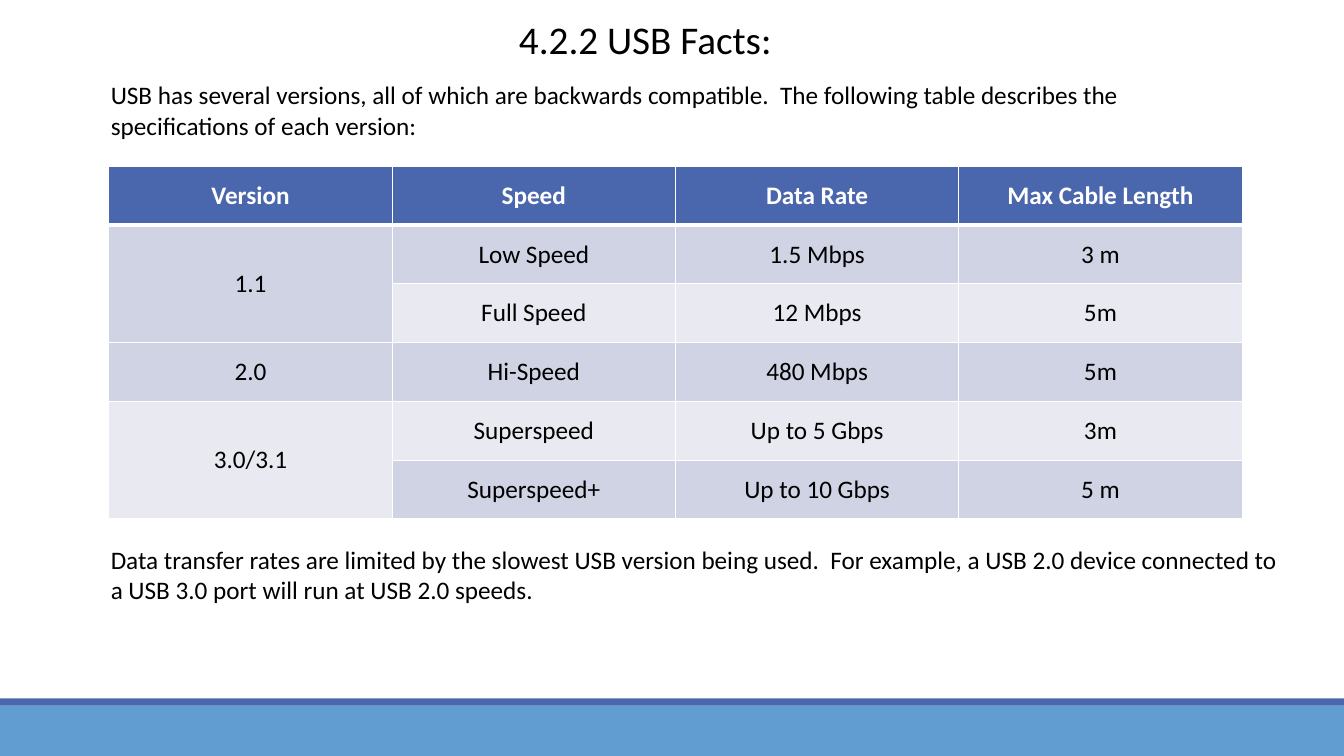
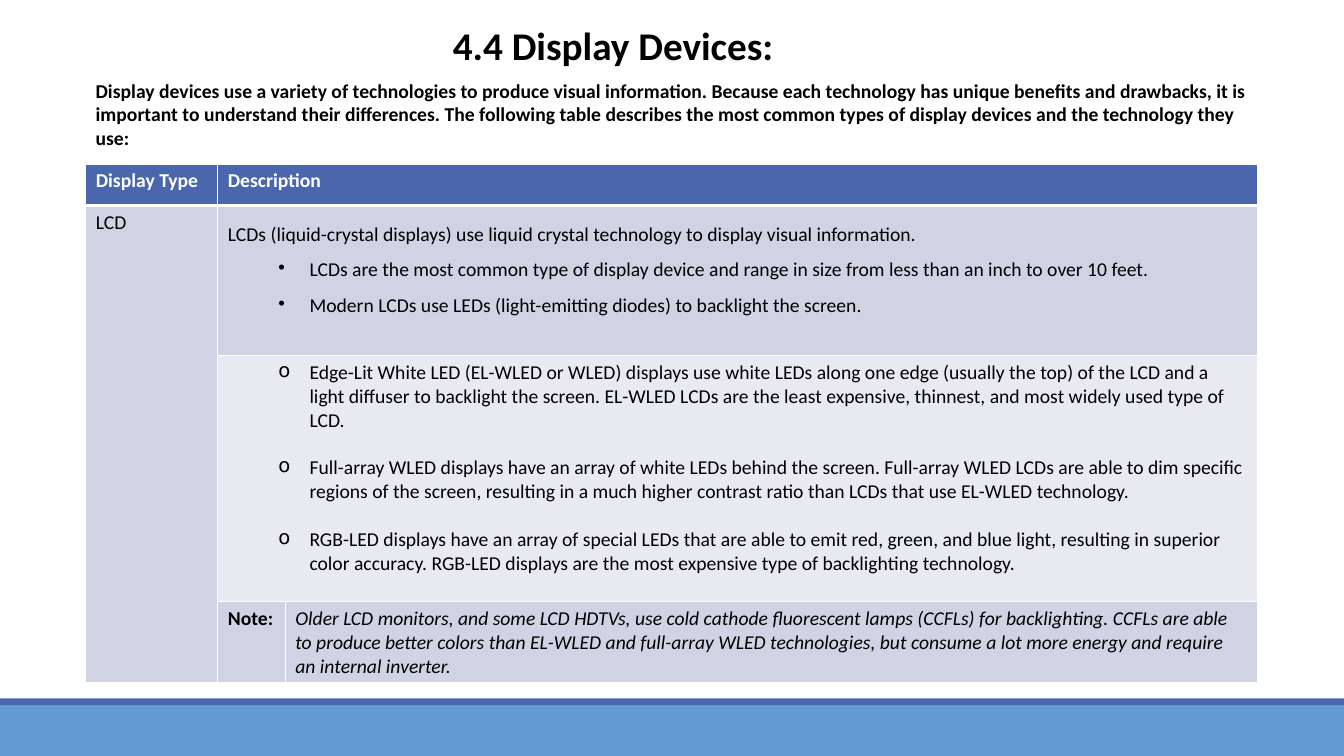
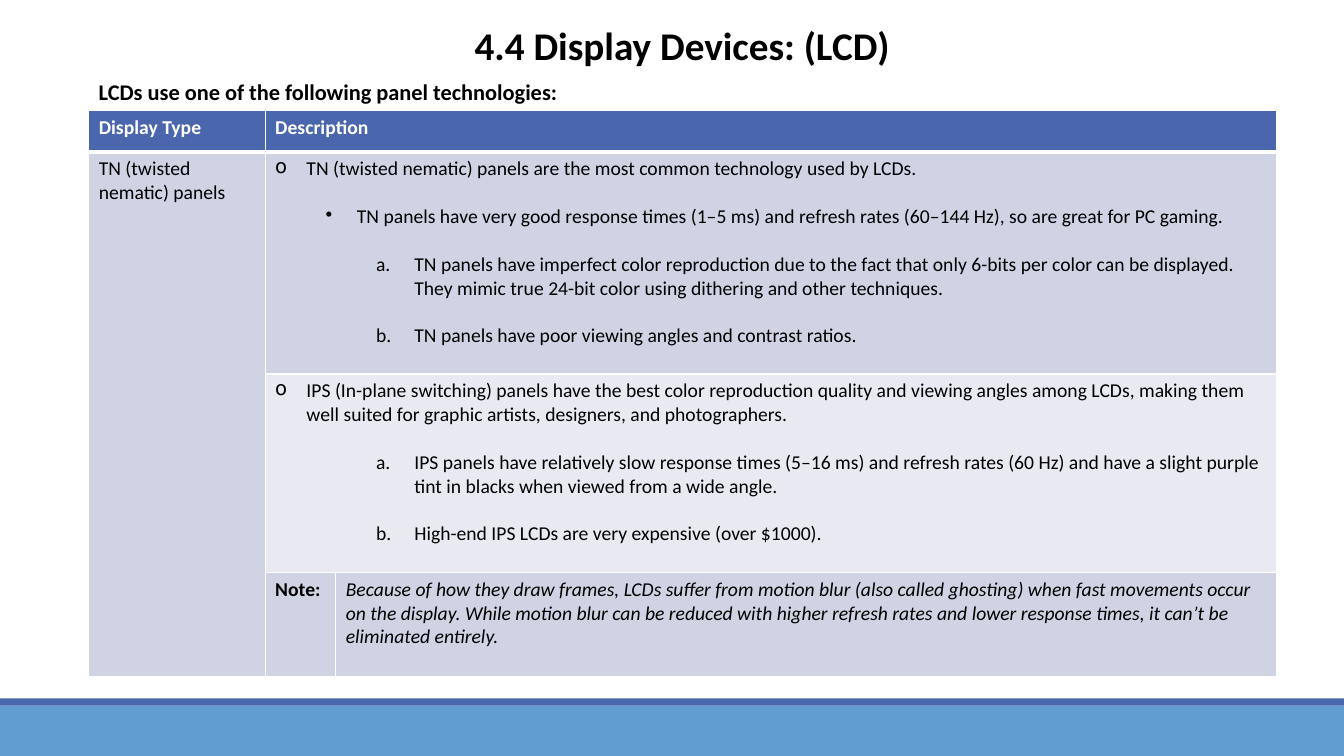
"""Build three slides on USB versions and display devices."""
from dataclasses import dataclass

from lxml.etree import SubElement
from pptx import Presentation
from pptx.dml.color import RGBColor
from pptx.enum.shapes import MSO_SHAPE
from pptx.enum.text import MSO_ANCHOR, MSO_AUTO_SIZE, PP_ALIGN
from pptx.oxml.ns import qn
from pptx.util import Inches, Pt


@dataclass(frozen=True)
class Theme:
    font: str = "Calibri"
    title: int = 28
    text: int = 18
    lead: int = 16
    small: int = 14
    gap: int = 17
    ink: str = "000000"
    white: str = "FFFFFF"
    navy: str = "4A66AC"
    sky: str = "629DD1"
    shades: tuple = ("E9EAF1", "D0D3E3")


@dataclass(frozen=True)
class Line:
    text: str
    mark: str = ""
    bold: bool = False
    ital: bool = False
    gap: int = 0
    pitch: float = 1.0


THEME = Theme()
MARKS = {
    "lead": (0.31, 0.31, 0, "o"),
    "ring": (0.81, 0.31, 1, "o"),
    "dot": (0.81, 0.31, 1, "•"),
    "letter": (1.38, 0.38, 2, ""),
}


def box(at):
    return [Inches(n) for n in at]


def paint(item, color):
    item.fill.solid()
    item.fill.fore_color.rgb = RGBColor.from_string(color)


def bullet(para, mark):
    left, hang, level, sign = MARKS[mark]
    para.level = level
    props = para._p.get_or_add_pPr()
    props.set("marL", str(Inches(left)))
    props.set("indent", str(-Inches(hang)))
    if sign:
        SubElement(props, qn("a:buChar"), char=sign)
    else:
        SubElement(props, qn("a:buAutoNum"), type="alphaLcPeriod")


def write(frame, lines, size, color=THEME.ink, align=PP_ALIGN.LEFT):
    for i, line in enumerate(lines):
        para = frame.add_paragraph() if i else frame.paragraphs[0]
        para.text = line.text
        if line.mark:
            bullet(para, line.mark)
        para.alignment = align
        para.line_spacing = line.pitch
        para.space_before = Pt(line.gap)
        font = para.font
        font.name, font.size = THEME.font, Pt(size)
        font.bold, font.italic = line.bold, line.ital
        font.color.rgb = RGBColor.from_string(color)


def start(deck, text, at, bold=True):
    slide = deck.slides.add_slide(deck.slide_layouts[5])
    title = slide.shapes.title
    title.left, title.top, title.width, title.height = box(at)
    frame = title.text_frame
    frame.auto_size = MSO_AUTO_SIZE.NONE
    frame.word_wrap = False
    write(frame, [Line(text, bold=bold)], THEME.title, align=PP_ALIGN.CENTER)
    return slide


def note(slide, text, at, size, bold=False):
    frame = slide.shapes.add_textbox(*box(at)).text_frame
    frame.word_wrap = True
    write(frame, [Line(text, bold=bold)], size)


def bands(slide):
    for at, color in (((0, 7, 13.33, 0.5), THEME.sky),
                      ((0, 6.93, 13.33, 0.07), THEME.navy)):
        band = slide.shapes.add_shape(MSO_SHAPE.RECTANGLE, *box(at))
        band.shadow.inherit = False
        paint(band, color)
        band.line.fill.background()
        slide.slide_layout.shapes.element.append(band._element)


def edge(cell, row):
    props = cell._tc.get_or_add_tcPr()
    wide = {0: "lnB", 1: "lnT"}.get(row)
    for side in ("lnL", "lnR", "lnT", "lnB"):
        rule = SubElement(props, qn(f"a:{side}"),
                          w=str(Pt(3 if side == wide else 1)))
        fill = SubElement(rule, qn("a:solidFill"))
        SubElement(fill, qn("a:srgbClr"), val=THEME.white)


def grid(slide, at, cols, rows, cells, spans, size, mid=False):
    spot = box((*at, sum(cols), sum(rows)))
    table = slide.shapes.add_table(len(rows), len(cols), *spot).table
    for col, width in zip(table.columns, cols):
        col.width = Inches(width)
    for row, height in zip(table.rows, rows):
        row.height = Inches(height)
    for r, line in enumerate(cells):
        for c, body in enumerate(line):
            cell = table.cell(r, c)
            edge(cell, r)
            paint(cell, THEME.shades[r % 2] if r else THEME.navy)
            if mid:
                cell.vertical_anchor = MSO_ANCHOR.MIDDLE
            if isinstance(body, str):
                body = [Line(body, bold=r == 0)]
            write(cell.text_frame, body or [], size,
                  THEME.ink if r else THEME.white,
                  PP_ALIGN.CENTER if mid else PP_ALIGN.LEFT)
    for top, left, low, right in spans:
        table.cell(top, left).merge(table.cell(low, right))


def panel(slide, at, cols, rows, kind, first, second, remark):
    cells = [
        ["Display Type", "Description", None],
        [kind, first, None],
        [None, second, None],
        [None, [Line("Note:", bold=True)], [Line(remark, ital=True)]],
    ]
    spans = [(r, 1, r, 2) for r in range(3)] + [(1, 0, 3, 0)]
    grid(slide, at, cols, rows, cells, spans, THEME.small)


def usb(deck):
    slide = start(deck, "4.2.2 USB Facts:", (4.81, 0.1, 3.18, 0.57), False)
    bands(slide)
    note(slide, "USB has several versions, all of which are backwards "
         "compatible.  The following table describes the specifications of "
         "each version:", (1, 0.74, 11.12, 0.71), THEME.text)
    note(slide, "Data transfer rates are limited by the slowest USB version "
         "being used.  For example, a USB 2.0 device connected to a USB 3.0 "
         "port will run at USB 2.0 speeds.",
         (1, 5.35, 11.82, 0.71), THEME.text)
    cells = [
        ["Version", "Speed", "Data Rate", "Max Cable Length"],
        ["1.1", "Low Speed", "1.5 Mbps", "3 m"],
        [None, "Full Speed", "12 Mbps", "5m"],
        ["2.0", "Hi-Speed", "480 Mbps", "5m"],
        ["3.0/3.1", "Superspeed", "Up to 5 Gbps", "3m"],
        [None, "Superspeed+", "Up to 10 Gbps", "5 m"],
    ]
    grid(slide, (1.08, 1.65), [2.81] * 4, [3.5 / 6] * 6, cells,
         [(1, 0, 2, 0), (4, 0, 5, 0)], THEME.text, True)


def display(deck):
    slide = start(deck, "4.4 Display Devices:", (4.37, 0.16, 3.42, 0.57))
    note(slide, "Display devices use a variety of technologies to produce "
         "visual information. Because each technology has unique benefits "
         "and drawbacks, it is important to understand their differences. "
         "The following table describes the most common types of display "
         "devices and the technology they use:",
         (0.85, 0.73, 11.62, 0.81), THEME.small, True)
    first = [
        Line("LCDs (liquid-crystal displays) use liquid crystal technology "
             "to display visual information.", pitch=1.5),
        Line("LCDs are the most common type of display device and range in "
             "size from less than an inch to over 10 feet.", "dot",
             pitch=1.5),
        Line("Modern LCDs use LEDs (light-emitting diodes) to backlight the "
             "screen.", "dot", pitch=1.5),
    ]
    second = [
        Line("Edge-Lit White LED (EL-WLED or WLED) displays use white LEDs "
             "along one edge (usually the top) of the LCD and a light "
             "diffuser to backlight the screen. EL-WLED LCDs are the least "
             "expensive, thinnest, and most widely used type of LCD.",
             "ring"),
        Line("Full-array WLED displays have an array of white LEDs behind "
             "the screen. Full-array WLED LCDs are able to dim specific "
             "regions of the screen, resulting in a much higher contrast "
             "ratio than LCDs that use EL-WLED technology.", "ring",
             gap=THEME.gap),
        Line("RGB-LED displays have an array of special LEDs that are able "
             "to emit red, green, and blue light, resulting in superior "
             "color accuracy. RGB-LED displays are the most expensive type "
             "of backlighting technology.", "ring", gap=THEME.gap),
    ]
    panel(slide, (0.85, 1.63), (1.31, 0.67, 9.64), (0.41, 1.49, 2.44, 0.8),
          "LCD", first, second,
          "Older LCD monitors, and some LCD HDTVs, use cold cathode "
          "fluorescent lamps (CCFLs) for backlighting. CCFLs are able to "
          "produce better colors than EL-WLED and full-array WLED "
          "technologies, but consume a lot more energy and require an "
          "internal inverter.")


def lcd(deck):
    slide = start(deck, "4.4 Display Devices: (LCD)",
                  (3.99, 0.16, 5.55, 0.57))
    note(slide, "LCDs use one of the following panel technologies:",
         (0.88, 0.73, 12.29, 0.37), THEME.lead, True)
    first = [
        Line("TN (twisted nematic) panels are the most common technology "
             "used by LCDs.", "lead"),
        Line("TN panels have very good response times (1–5 ms) and refresh "
             "rates (60–144 Hz), so are great for PC gaming.", "dot",
             gap=THEME.gap),
        Line("TN panels have imperfect color reproduction due to the fact "
             "that only 6-bits per color can be displayed. They mimic true "
             "24-bit color using dithering and other techniques.", "letter",
             gap=THEME.gap),
        Line("TN panels have poor viewing angles and contrast ratios.",
             "letter", gap=THEME.gap),
    ]
    second = [
        Line("IPS (In-plane switching) panels have the best color "
             "reproduction quality and viewing angles among LCDs, making "
             "them well suited for graphic artists, designers, and "
             "photographers.", "lead"),
        Line("IPS panels have relatively slow response times (5–16 ms) and "
             "refresh rates (60 Hz) and have a slight purple tint in blacks "
             "when viewed from a wide angle.", "letter", gap=THEME.gap),
        Line("High-end IPS LCDs are very expensive (over $1000).", "letter",
             gap=THEME.gap),
    ]
    panel(slide, (0.88, 1.1), (1.75, 0.7, 9.33), (0.41, 2.2, 1.97, 1.03),
          "TN (twisted nematic) panels", first, second,
          "Because of how they draw frames, LCDs suffer from motion blur "
          "(also called ghosting) when fast movements occur on the display. "
          "While motion blur can be reduced with higher refresh rates and "
          "lower response times, it can’t be eliminated entirely.")


def main():
    deck = Presentation()
    deck.slide_width, deck.slide_height = Inches(13.33), Inches(7.5)
    usb(deck)
    display(deck)
    lcd(deck)
    deck.save("out.pptx")


if __name__ == "__main__":
    main()
